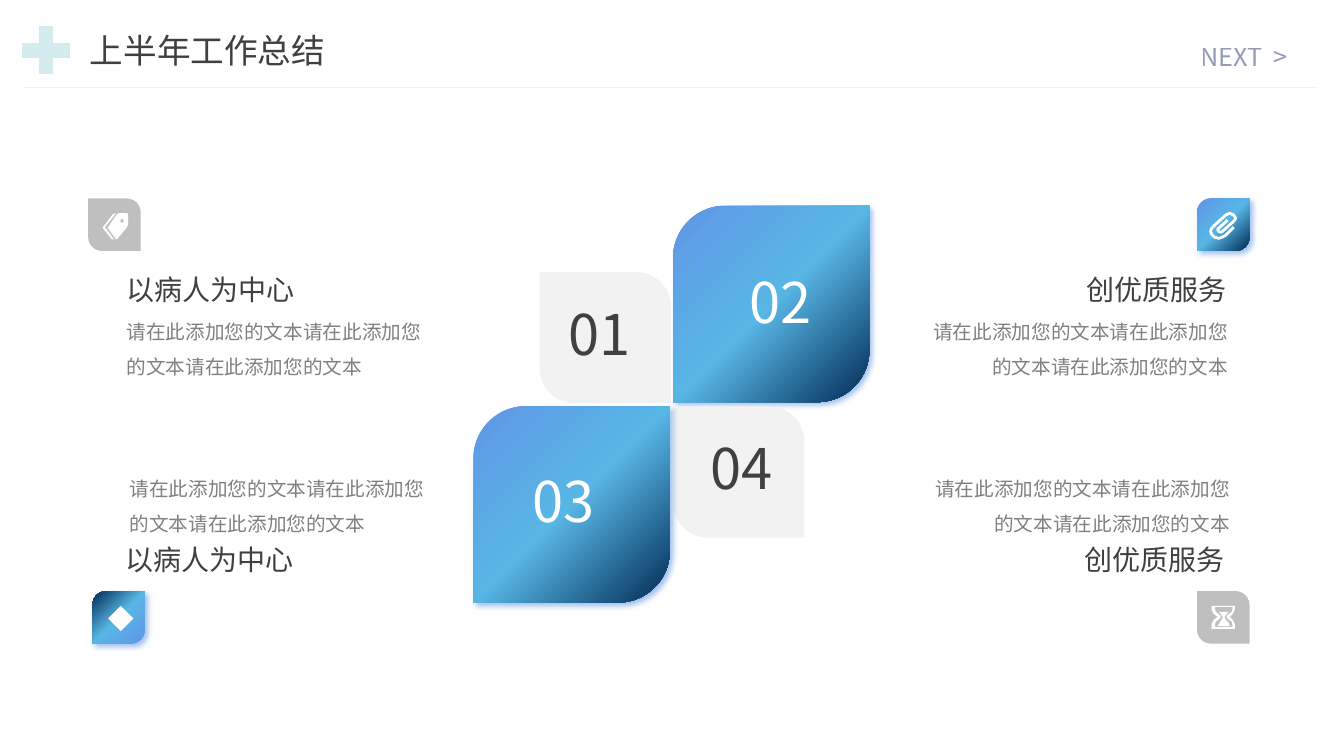
"""Builds the half-year work summary slide with four petals and four notes."""
from copy import deepcopy

from lxml.etree import SubElement as Sub
from pptx import Presentation
from pptx.dml.color import RGBColor as RGB
from pptx.enum.shapes import MSO_CONNECTOR as Conn, MSO_SHAPE as Shape
from pptx.enum.text import MSO_ANCHOR as Anchor, MSO_AUTO_SIZE as Auto, PP_ALIGN as Align
from pptx.oxml.ns import qn
from pptx.util import Pt

PX = 9525
GRID = 9144
FONT = "Noto Sans CJK SC"
INK = {name: RGB.from_string(code) for name, code in {
    "white": "FFFFFF", "dark": "404040", "gray": "808080", "navy": "324274",
    "mint": "D4ECEE", "pale": "F2F2F2", "mid": "BFBFBF",
    "sky": "6096E6", "cyan": "58B6E5", "deep": "012B55", "glow": "2169D3"}.items()}
NOTE = "请在此添加您的文本" * 3

deck = Presentation()
deck.slide_width, deck.slide_height = 1280 * PX, 720 * PX
slide = deck.slides.add_slide(deck.slide_layouts[5])
shapes = slide.shapes


def write(text, box, size, ink="dark", align=Align.LEFT, anchor=Anchor.TOP,
          space=1.0, alpha=None, holder=None):
    item = holder or shapes.add_textbox(0, 0, 0, 0)
    item.left, item.top, item.width, item.height = [n * PX for n in box]
    frame = item.text_frame
    frame.word_wrap, frame.auto_size = True, Auto.NONE
    frame.vertical_anchor = anchor
    para = frame.paragraphs[0]
    para.alignment, para.line_spacing = align, space
    run = para.add_run()
    run.text = text
    run.font.size, run.font.name = Pt(size), FONT
    run.font.color.rgb = INK[ink]
    Sub(run.font._element, qn("a:ea"), typeface=FONT)
    if alpha:
        tint = run.font._element.find(".//" + qn("a:srgbClr"))
        Sub(tint, qn("a:alpha"), val=str(alpha * 1000))


def leaf(left, top, side, ink=None, flip=""):
    item = shapes.add_shape(Shape.ROUND_2_DIAG_RECTANGLE,
                            left * PX, top * PX, side * PX, side * PX)
    item.adjustments[0], item.adjustments[1] = 0.265, 0
    item.line.fill.background()
    item.shadow.inherit = False
    props = item._element.spPr
    for axis in flip:
        props.xfrm.set("flip" + axis, "1")
    if ink:
        item.fill.solid()
        item.fill.fore_color.rgb = INK[ink]
        return
    item.fill.gradient()
    item.fill.gradient_angle = 315
    stops = props.find(".//" + qn("a:gsLst"))
    stops.append(deepcopy(stops[0]))
    for stop, name, place in zip(item.fill.gradient_stops, ("sky", "cyan", "deep"), (0, 0.5, 1)):
        stop.color.rgb, stop.position = INK[name], place
    shade = Sub(props.find(qn("a:effectLst")), qn("a:outerShdw"), blurRad=str(Pt(4)),
                dist=str(Pt(3)), dir="2700000", algn="tl", rotWithShape="0")
    tint = Sub(shade, qn("a:srgbClr"), val=str(INK["glow"]))
    Sub(tint, qn("a:alpha"), val="40000")


write("上半年工作总结", (76, 23, 261, 50), 24, anchor=Anchor.MIDDLE, holder=shapes.title)
write("NEXT  >", (1134, 4, 140, 100), 18, "navy", anchor=Anchor.MIDDLE, alpha=53)

plus = shapes.add_shape(Shape.MATH_PLUS, 12 * PX, 16 * PX, 64 * PX, 64 * PX)
plus.shadow.inherit = False
plus.fill.solid()
plus.fill.fore_color.rgb = INK["mint"]
plus.line.color.rgb, plus.line.width = INK["white"], Pt(1)

rule = shapes.add_connector(Conn.STRAIGHT, 22 * PX, 83 * PX, 1254 * PX, 83 * PX)
rule.line.color.rgb, rule.line.width = INK["pale"], Pt(0.5)
Sub(rule._element.spPr, qn("a:effectLst"))

for spot in ((641, 196, 187), (641, 387, 125, "pale", "H"),
             (514, 259, 125, "pale", "H"), (451, 387, 187),
             (84, 189, 50, "mid", "H"), (88, 563, 50, None, "HV"),
             (1140, 189, 50), (1140, 563, 50, "mid", "V")):
    leaf(*spot)

for num, left, top, width, ink in (("01", 529, 281, 84, "dark"), ("02", 701, 250, 84, "white"),
                                   ("03", 490, 440, 93, "white"), ("04", 653, 408, 107, "dark")):
    write(num, (left, top, width, 74), 40, ink, Align.CENTER)

for head, align, left, top, low, base in (
        ("以病人为中心", Align.LEFT, 111, 255, 111, 289),
        ("创优质服务", Align.RIGHT, 974, 255, 876, 289),
        ("以病人为中心", Align.LEFT, 110, 512, 114, 438),
        ("创优质服务", Align.RIGHT, 972, 512, 878, 438)):
    write(head, (left, top, 204, 42), 20, align=align)
    write(NOTE, (low, base, 303, 74), 14, "gray", align, space=1.5)

tag = [[(24, 0), (16, 0), (14, 1), (5, 14), (5, 15), (13, 26), (14, 26), (24, 14), (25, 11), (25, 1)],
       [(19, 10), (17, 8), (19, 5), (21, 8)],
       [(2, 14), (13, 0), (10, 1), (0, 14), (0, 15), (9, 26), (11, 26)]]
clip = [[(18, 8), (9, 16), (8, 17), (9, 19), (11, 20), (13, 19), (24, 9), (26, 6), (24, 3), (20, 1),
         (16, 3), (5, 13), (2, 16), (1, 19), (2, 22), (5, 25), (9, 26), (12, 25), (16, 23), (24, 15)]]
glass = [[(18, 11), (21, 8), (23, 4), (23, 0), (0, 0), (0, 4), (2, 8), (6, 11), (2, 14), (0, 18),
          (0, 23), (23, 23), (23, 18), (21, 14)],
         [(3, 21), (4, 16), (9, 12), (9, 10), (4, 6), (3, 1), (21, 1), (20, 6), (15, 10), (15, 12),
          (20, 16), (21, 21)],
         [(15, 15), (13, 12), (13, 11), (15, 8), (17, 6), (7, 6), (9, 8), (11, 11), (11, 12),
          (9, 15), (6, 20), (18, 20), (17, 17)]]
for rings, left, top, solid in ((tag, 98, 203, True), (clip, 1152, 202, False),
                                (glass, 1154, 577, True)):
    path = shapes.build_freeform(*rings[0][0], scale=GRID)
    for ring in rings:
        path.move_to(*ring[0])
        path.add_line_segments(ring[1:], close=solid)
    icon = path.convert_to_shape(left * PX, top * PX)
    icon.shadow.inherit = False
    if solid:
        icon.fill.solid()
        icon.fill.fore_color.rgb = INK["white"]
        icon.line.fill.background()
    else:
        icon.fill.background()
        icon.line.color.rgb, icon.line.width = INK["white"], Pt(2)

gem = shapes.add_shape(Shape.DIAMOND, 103 * PX, 577 * PX, 24 * PX, 24 * PX)
gem.shadow.inherit = False
gem.fill.solid()
gem.fill.fore_color.rgb = INK["white"]
gem.line.fill.background()

deck.save("out.pptx")
